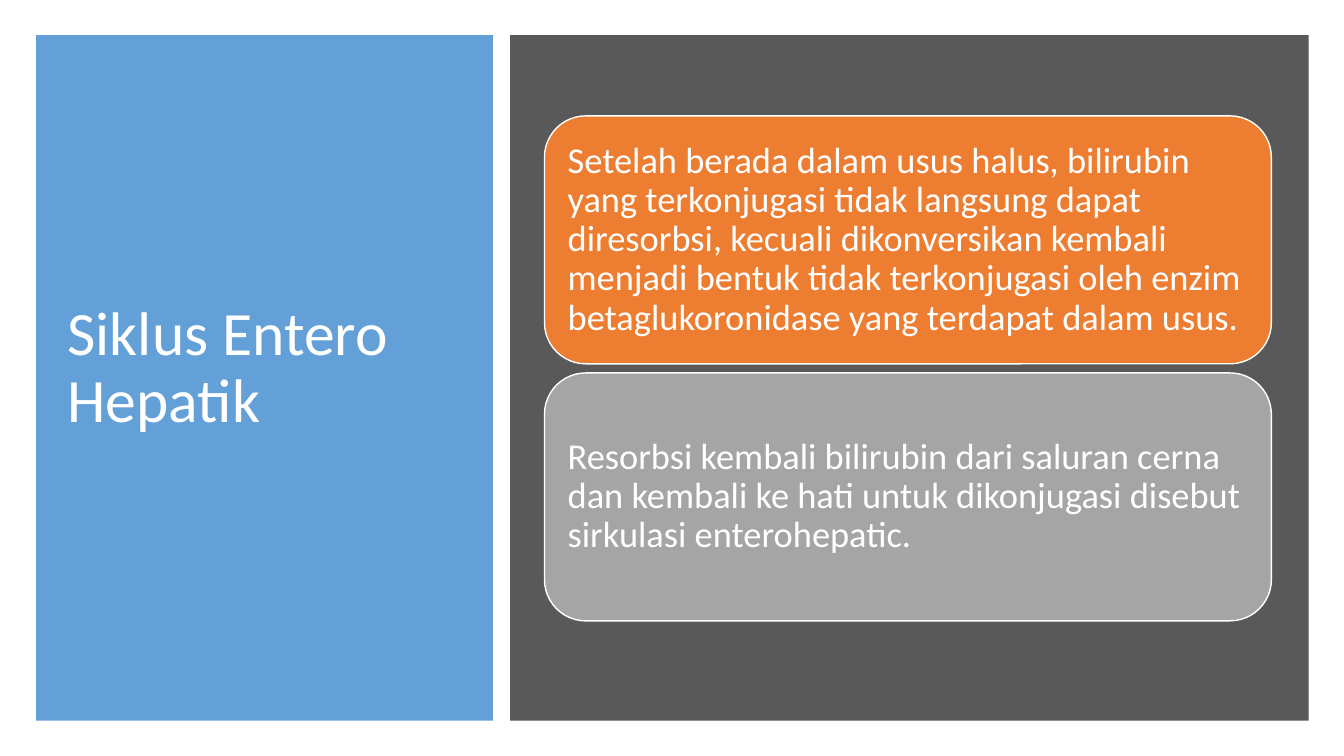
"""Build the slide on the enterohepatic cycle of bilirubin."""
import pptx
import pptx.dml.color
import pptx.enum.shapes
import pptx.enum.text
import pptx.oxml
import pptx.oxml.ns
import pptx.util
from pptx.util import Inches

COLORS = {
    "title_panel": "5B9BD5",
    "content_panel": "595959",
    "orange": "ED7D31",
    "gray": "A5A5A5",
    "white": "FFFFFF",
}
CARDS = [
    ("orange", "Setelah berada dalam usus halus, bilirubin yang terkonjugasi tidak "
     "langsung dapat diresorbsi, kecuali dikonversikan kembali menjadi bentuk tidak "
     "terkonjugasi oleh enzim betaglukoronidase yang terdapat dalam usus."),
    ("gray", "Resorbsi kembali bilirubin dari saluran cerna dan kembali ke hati "
     "untuk dikonjugasi disebut sirkulasi enterohepatic."),
]
CARD_TOP = 1.15
CARD_HEIGHT = 2.46
CARD_STEP = 2.55


def rgb(name):
    """Return the named colour."""
    return pptx.dml.color.RGBColor.from_string(COLORS[name])


def add_block(slide, kind, color, left, top, width, height):
    """Add a filled shape without line or shadow."""
    shape = slide.shapes.add_shape(
        kind, Inches(left), Inches(top), Inches(width), Inches(height))
    shape.shadow.inherit = False
    shape.fill.solid()
    shape.fill.fore_color.rgb = rgb(color)
    shape.line.fill.background()
    return shape


def set_opacity(shape, percent):
    """Make the solid fill of a shape partly transparent."""
    color = shape.element.spPr.find(".//" + pptx.oxml.ns.qn("a:srgbClr"))
    alpha = pptx.oxml.parse_xml(f'<a:alpha {pptx.oxml.ns.nsdecls("a")} val="{percent * 1000}"/>')
    color.append(alpha)


def write_text(shape, text, size):
    """Write one white, left-aligned, vertically centred paragraph."""
    frame = shape.text_frame
    frame.text = text
    frame.word_wrap = True
    frame.auto_size = pptx.enum.text.MSO_AUTO_SIZE.NONE
    frame.vertical_anchor = pptx.enum.text.MSO_ANCHOR.MIDDLE
    paragraph = frame.paragraphs[0]
    paragraph.alignment = pptx.enum.text.PP_ALIGN.LEFT
    paragraph.line_spacing = 0.9
    paragraph.font.name = "Calibri"
    paragraph.font.size = pptx.util.Pt(size)
    paragraph.font.color.rgb = rgb("white")


def add_title(slide, text):
    """Place the title on its blue panel."""
    panel = add_block(slide, pptx.enum.shapes.MSO_SHAPE.RECTANGLE,
                      "title_panel", 0.36, 0.35, 4.53, 6.8)
    set_opacity(panel, 95)
    title = slide.shapes.title
    title.element.addprevious(panel.element)
    title.left, title.top = Inches(0.57), Inches(0.64)
    title.width, title.height = Inches(4.07), Inches(6.04)
    write_text(title, text, 44)


def add_card(slide, index, color, text):
    """Add one rounded card to the stack."""
    card = add_block(slide, pptx.enum.shapes.MSO_SHAPE.ROUNDED_RECTANGLE, color,
                     5.4, CARD_TOP + index * CARD_STEP, 7.21, CARD_HEIGHT)
    card.line.color.rgb = rgb("white")
    card.line.width = pptx.util.Pt(1)
    frame = card.text_frame
    frame.margin_left = frame.margin_right = Inches(0.11)
    frame.margin_top = frame.margin_bottom = Inches(0.11)
    write_text(card, text, 26)


def main():
    """Build and save the presentation."""
    presentation = pptx.Presentation()
    presentation.slide_width = Inches(13.33)
    presentation.slide_height = Inches(7.5)
    slide = presentation.slides.add_slide(presentation.slide_layouts[5])
    add_title(slide, "Siklus Entero Hepatik")
    add_block(slide, pptx.enum.shapes.MSO_SHAPE.RECTANGLE,
              "content_panel", 5.06, 0.35, 7.92, 6.8)
    for index, (color, text) in enumerate(CARDS):
        add_card(slide, index, color, text)
    presentation.save("out.pptx")


if __name__ == "__main__":
    main()
